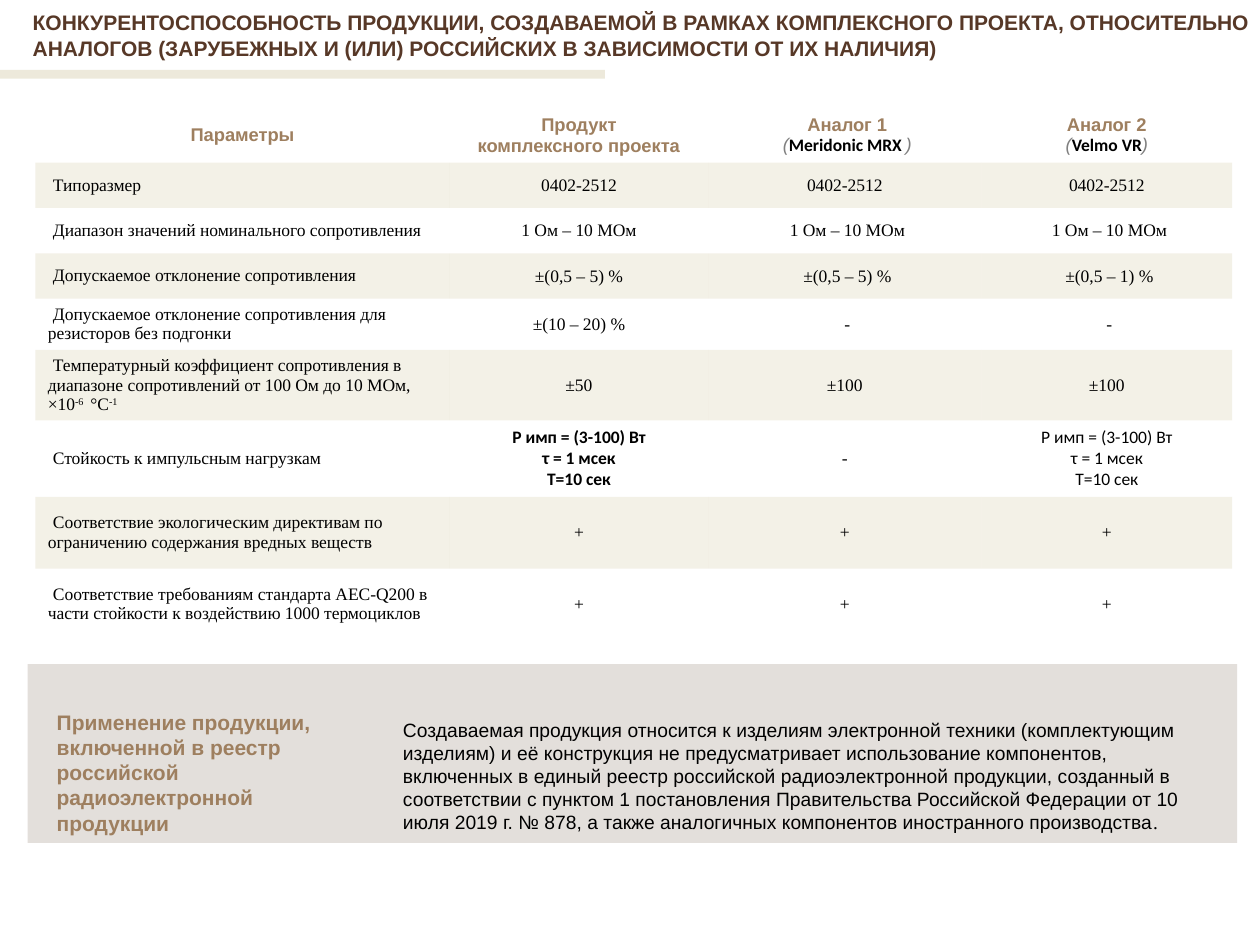
from lxml import etree
from pptx import Presentation
from pptx import util as u
from pptx.dml.color import RGBColor
from pptx.enum import shapes, text
from pptx.oxml.ns import qn

BROWN = RGBColor(0x57, 0x38, 0x27)
TAN = RGBColor(0x9E, 0x7F, 0x5F)
SAND = RGBColor(0xC7, 0xB9, 0x8B)
PANEL = RGBColor(0xE3, 0xDF, 0xDB)
GRAY = RGBColor(0x80, 0x80, 0x80)
BLACK = RGBColor(0, 0, 0)
WHITE = RGBColor(0xFF, 0xFF, 0xFF)
NO_STYLE = "{2D5ABB26-0587-4C30-8999-92F81FD0307C}"

deck = Presentation()
deck.slide_width, deck.slide_height = u.Inches(10), u.Inches(7.5)
slide = deck.slides.add_slide(deck.slide_layouts[6])
COL, ROW = deck.slide_width / 100, deck.slide_height / 75


def style(**changes):
    return {"name": "Times New Roman", "size": u.Pt(10), "bold": False,
            "italic": False, "color": BLACK} | changes


def write(paragraph, runs):
    """Add (words, style) runs; a style's "raise" is a baseline shift in percent."""
    for words, look in runs:
        run = paragraph.add_run()
        run.text = words
        for key, value in look.items():
            if key == "color":
                run.font.color.rgb = value
            elif key == "raise":
                run.font._element.set("baseline", str(value * 1000))
            else:
                setattr(run.font, key, value)


BODY = style()
POWER = style(name="Calibri")
POWER_BOLD = POWER | {"bold": True}
RAISED = style(**{"raise": 30})
HEAD = style(name="Arial", size=u.Pt(10.5), bold=True, color=TAN)
BRACKET = HEAD | {"bold": False, "italic": True, "color": GRAY}
TITLE = style(name="Arial", size=u.Pt(12), bold=True, color=BROWN)
LABEL = TITLE | {"color": TAN}
NOTE = style(name="Arial", size=u.Pt(11))

# Accent rule under the title and panel at the bottom
rule = slide.shapes.add_connector(
    shapes.MSO_CONNECTOR.STRAIGHT, 0, int(5.9 * ROW), int(48 * COL), int(5.9 * ROW))
rule.line.color.rgb = SAND
rule.line.width = u.Pt(5)
etree.SubElement(rule.line._ln.find(".//" + qn("a:srgbClr")), qn("a:alpha"), val="31000")
etree.SubElement(rule._element.spPr, qn("a:effectLst"))

panel = slide.shapes.add_shape(
    shapes.MSO_SHAPE.RECTANGLE, int(2.2 * COL), int(52.7 * ROW), int(96 * COL), int(14.2 * ROW))
panel.shadow.inherit = False
panel.fill.solid()
panel.fill.fore_color.rgb = PANEL
panel.line.fill.background()

# Comparison table: a cell is a list of paragraphs, a paragraph a list of runs
power = ["P имп = (3-100) Вт", "τ = 1 мсек", "T=10 сек"]
rows = [
    [[[("Параметры", HEAD)]],
     [[("Продукт", HEAD)], [("комплексного проекта", HEAD)]]]
    + [[[(title, HEAD)], [("(", BRACKET), (maker, POWER_BOLD), (")", BRACKET)]]
       for title, maker in [("Аналог 1", "Meridonic MRX "), ("Аналог 2", "Velmo VR")]]
]
for values in [
    ["Типоразмер"] + ["0402-2512"] * 3,
    ["Диапазон значений номинального сопротивления"] + ["1 Ом – 10 МОм"] * 3,
    ["Допускаемое отклонение сопротивления", "±(0,5 – 5) %", "±(0,5 – 5) %", "±(0,5 – 1) %"],
    ["Допускаемое отклонение сопротивления для резисторов без подгонки",
     "±(10 – 20) %", "-", "-"],
    ["Температурный коэффициент сопротивления в диапазоне сопротивлений "
     "от 100 Ом до 10 МОм, ×10", "±50", "±100", "±100"],
    ["Стойкость к импульсным нагрузкам", "", "-", ""],
    ["Соответствие экологическим директивам по ограничению содержания вредных веществ"]
    + ["+"] * 3,
    ["Соответствие требованиям стандарта AEC-Q200 в части стойкости "
     "к воздействию 1000 термоциклов"] + ["+"] * 3,
]:
    rows.append([[[(value, BODY)]] for value in values])
rows[5][0][0] += [("-6 ", RAISED), (" °С", BODY), ("-1", RAISED)]
rows[6][1] = [[(line, POWER_BOLD)] for line in power]
rows[6][3] = [[(line, POWER)] for line in power]

widths = [32.9, 20.5, 21.7, 19.9]
heights = [4.2, 3.6, 3.6, 3.6, 3.7, 4.1, 4.1, 5.7, 5.7]
frame = slide.shapes.add_table(
    len(heights), len(widths), int(2.8 * COL), int(8.6 * ROW),
    int(sum(widths) * COL), int(sum(heights) * ROW))
table = frame.table
table.first_row = table.horz_banding = False
frame._element.find(".//" + qn("a:tableStyleId")).text = NO_STYLE
for column, width in zip(table.columns, widths):
    column.width = int(width * COL)
for r, (height, cells) in enumerate(zip(heights, rows)):
    table.rows[r].height = int(height * ROW)
    for c, paragraphs in enumerate(cells):
        cell = table.cell(r, c)
        cell.vertical_anchor = text.MSO_ANCHOR.MIDDLE
        if r % 2 or r == 8:
            cell.fill.solid()
            cell.fill.fore_color.rgb = SAND if r % 2 else WHITE
            etree.SubElement(
                cell._tc.tcPr.find(".//" + qn("a:srgbClr")), qn("a:alpha"), val="20000")
        else:
            cell.fill.background()
        tight = r in (3, 4, 5) and c > 0
        if tight:
            cell.margin_left = cell.margin_right = int(0.4 * COL)
            cell.margin_top = cell.margin_bottom = 0
        for i, runs in enumerate(paragraphs):
            words = cell.text_frame
            paragraph = words.add_paragraph() if i else words.paragraphs[0]
            if c:
                paragraph.alignment = text.PP_ALIGN.CENTER
            else:
                paragraph.alignment = text.PP_ALIGN.LEFT if r else text.PP_ALIGN.CENTER
            if tight:
                paragraph.line_spacing = 1.07
            if (c == 0 and r) or (c > 1 and r in (2, 3, 4)) or (c == 2 and r == 0):
                paragraph._p.get_or_add_pPr().set("indent", str(int(0.4 * COL)))
            write(paragraph, runs)

# Title, panel label and panel note: left, top, width, height, inset, lines
title = ("КОНКУРЕНТОСПОСОБНОСТЬ ПРОДУКЦИИ, СОЗДАВАЕМОЙ В РАМКАХ КОМПЛЕКСНОГО ПРОЕКТА, "
         "ОТНОСИТЕЛЬНО АНАЛОГОВ (ЗАРУБЕЖНЫХ И (ИЛИ) РОССИЙСКИХ В ЗАВИСИМОСТИ ОТ ИХ НАЛИЧИЯ)")
label = ["Применение продукции,", "включенной в реестр", "российской",
         "радиоэлектронной", "продукции"]
note = ("Создаваемая продукция относится к изделиям электронной техники (комплектующим "
        "изделиям) и её конструкция не предусматривает использование компонентов, включенных "
        "в единый реестр российской радиоэлектронной продукции, созданный в соответствии "
        "с пунктом 1 постановления Правительства Российской Федерации от 10 июля 2019 г. "
        "№ 878, а также аналогичных компонентов иностранного производства")
for left, top, width, height, inset, lines in [
    (2.1, 0.3, 97.7, 5, 0.5, [[(title, TITLE)]]),
    (4, 5.58 * 10, 32.5, 11.1, 0.5, [[(line, LABEL)] for line in label]),
    (31, 56.5, 64, 10.3, None, [[(note, NOTE), (".", NOTE | {"name": "Times New Roman"})]]),
]:
    words = slide.shapes.add_textbox(
        int(left * COL), int(top * ROW), int(width * COL), int(height * ROW)).text_frame
    words.word_wrap = True
    words.auto_size = text.MSO_AUTO_SIZE.SHAPE_TO_FIT_TEXT
    if inset:
        for side in ("left", "top", "right", "bottom"):
            setattr(words, f"margin_{side}", int(inset * COL))
    for i, runs in enumerate(lines):
        if i:
            words.paragraphs[0].add_line_break()
        write(words.paragraphs[0], runs)

deck.save("out.pptx")
